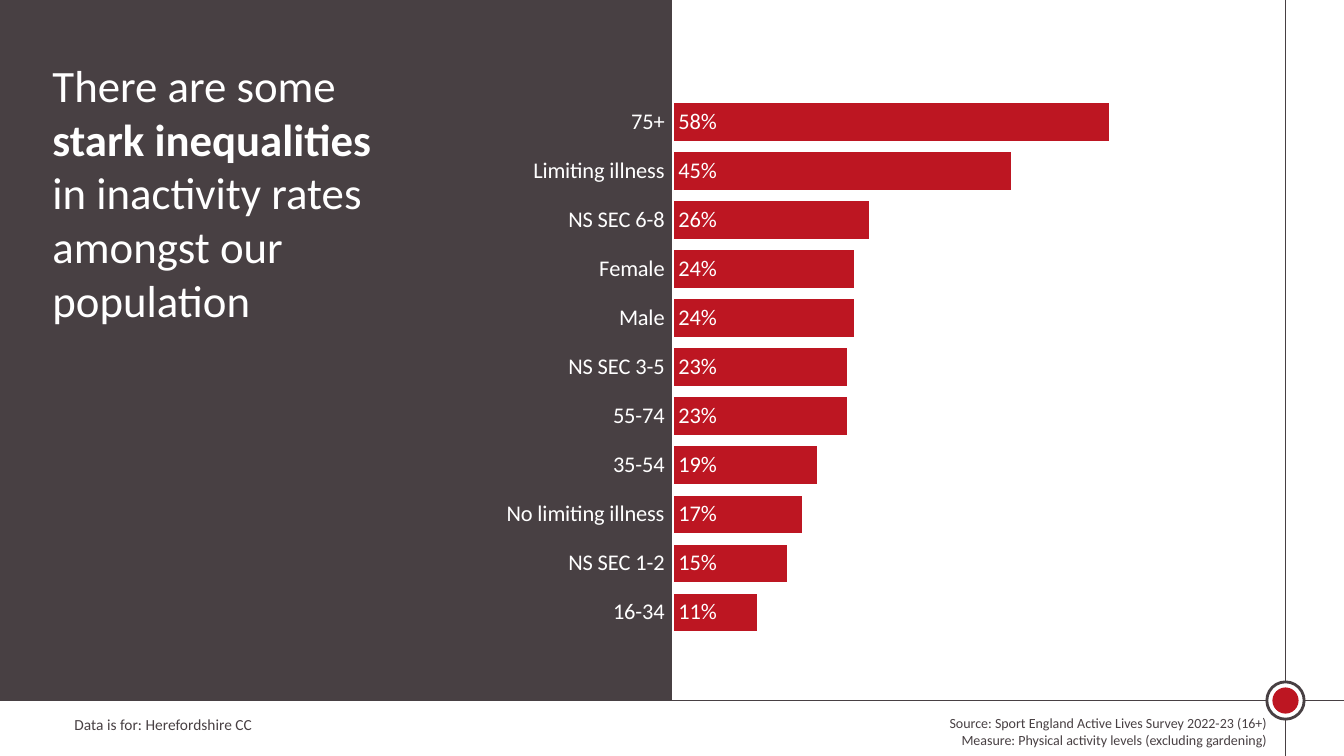
from lxml import etree
from pptx import Presentation
from pptx.chart.data import CategoryChartData
from pptx.dml.color import RGBColor
from pptx.enum.chart import XL_CHART_TYPE as ChartType, XL_LABEL_POSITION as LabelPos
from pptx.enum.chart import XL_TICK_LABEL_POSITION as TickLabels, XL_TICK_MARK as TickMark
from pptx.enum.shapes import MSO_CONNECTOR as Connector, MSO_SHAPE as Preset
from pptx.enum.text import MSO_ANCHOR as Anchor, MSO_AUTO_SIZE as AutoSize, PP_ALIGN as Align
from pptx.oxml import parse_xml
from pptx.oxml.ns import nsdecls, qn
from pptx.util import Inches, Pt

FONT = "Calibri"
DARK, RED, WHITE = "484043", "BD1622", "FFFFFF"
WIDTH, HEIGHT = 13.33, 7.5
RULE_X, RULE_Y = 12.75, 6.95

HEADLINE = [
    [("There are some ", False), ("stark inequalities", True)],
    [("in inactivity rates amongst our population", False)],
]
FOOTERS = [
    (["Data is for: Herefordshire CC"], (0.64, 7.04, 3.63, 0.29), 11, Align.LEFT),
    (["Source: Sport England Active Lives Survey 2022-23 (16+)",
      "Measure: Physical activity levels (excluding gardening)"],
     (6.19, 7.04, 6.47, 0.44), 10, Align.RIGHT),
]
INACTIVITY = {
    "75+": 0.58, "Limiting illness": 0.45, "NS SEC 6-8": 0.26, "Female": 0.24,
    "Male": 0.24, "NS SEC 3-5": 0.23, "55-74": 0.23, "35-54": 0.19,
    "No limiting illness": 0.17, "NS SEC 1-2": 0.15, "16-34": 0.11,
}
CHART_BOX = (3.11, 0.79, 9.52, 5.86)
PLOT_SHARES = {"x": 0.376, "y": 0.03, "w": 0.624, "h": 0.914}
RINGS = [(0.37, WHITE, DARK), (0.26, RED, None)]


def rgb(color):
    return RGBColor.from_string(color)


def inches(box):
    return [Inches(length) for length in box]


def style(font, size, color, bold=False):
    font.name, font.size, font.bold = FONT, Pt(size), bold
    font.color.rgb = rgb(color)


def add_block(slide, preset, box, fill, outline=None):
    block = slide.shapes.add_shape(preset, *inches(box))
    block.shadow.inherit = False
    block.fill.solid()
    block.fill.fore_color.rgb = rgb(fill)
    if outline:
        block.line.color.rgb = rgb(outline)
        block.line.width = Pt(2)
    else:
        block.line.fill.background()


def add_rule(slide, ends):
    rule = slide.shapes.add_connector(Connector.STRAIGHT, *inches(ends))
    rule.line.color.rgb = rgb(DARK)
    rule.line.width = Pt(0.5)
    etree.SubElement(rule._element.spPr, qn("a:effectLst"))


def add_footer(slide, lines, box, size, align):
    frame = slide.shapes.add_textbox(*inches(box)).text_frame
    frame.word_wrap = True
    frame.text = "\n".join(lines)
    for paragraph in frame.paragraphs:
        paragraph.alignment = align
        style(paragraph.runs[0].font, size, DARK)


def add_headline(slide):
    title = slide.shapes.title
    slide.shapes._spTree.append(title._element)
    title.left, title.top, title.width, title.height = inches((0.42, 0.52, 3.85, 3.39))
    frame = title.text_frame
    frame.word_wrap, frame.auto_size = True, AutoSize.NONE
    frame.vertical_anchor = Anchor.TOP
    frame.text = "\n".join("" for _ in HEADLINE)
    for paragraph, parts in zip(frame.paragraphs, HEADLINE):
        paragraph.alignment = Align.LEFT
        for words, bold in parts:
            run = paragraph.add_run()
            run.text = words
            style(run.font, 32, WHITE, bold)


def add_inactivity_chart(slide):
    rates = CategoryChartData(number_format="0%")
    rates.categories = list(INACTIVITY)
    rates.add_series("Inactivity rate", list(INACTIVITY.values()))
    chart = slide.shapes.add_chart(ChartType.BAR_CLUSTERED, *inches(CHART_BOX), rates).chart
    chart.has_legend = chart.has_title = False
    style(chart.font, 16, WHITE)

    groups, scale = chart.category_axis, chart.value_axis
    groups.reverse_order = True
    groups.major_tick_mark = TickMark.OUTSIDE
    groups.tick_label_position = TickLabels.NEXT_TO_AXIS
    groups.format.line.fill.background()
    style(groups.tick_labels.font, 16, WHITE)
    scale.minimum_scale, scale.maximum_scale = 0, 0.8
    scale.has_major_gridlines = scale.visible = False

    plot = chart.plots[0]
    plot.gap_width, plot.vary_by_categories = 30, False
    bars = plot.series[0]
    bars.format.fill.solid()
    bars.format.fill.fore_color.rgb = rgb(RED)
    labels = bars.data_labels
    labels.show_value = True
    labels.position = LabelPos.INSIDE_BASE
    labels.number_format, labels.number_format_is_linked = "0%", False
    style(labels.font, 16, WHITE)

    shares = "".join(f'<c:{side} val="{share}"/>' for side, share in PLOT_SHARES.items())
    layout = parse_xml(
        f'<c:layout {nsdecls("c")}><c:manualLayout><c:layoutTarget val="inner"/>'
        f'<c:xMode val="edge"/><c:yMode val="edge"/>{shares}</c:manualLayout></c:layout>')
    area = chart._chartSpace.chart.plotArea
    for automatic in area.findall(qn("c:layout")):
        area.remove(automatic)
    area.insert(0, layout)


def main():
    deck = Presentation()
    deck.slide_width, deck.slide_height = inches((WIDTH, HEIGHT))
    slide = deck.slides.add_slide(deck.slide_layouts[5])
    add_block(slide, Preset.RECTANGLE, (0, 0, WIDTH / 2, RULE_Y), DARK)
    add_rule(slide, (RULE_X, 0, RULE_X, HEIGHT))
    add_rule(slide, (0, RULE_Y, WIDTH, RULE_Y))
    for size, fill, outline in RINGS:
        box = (RULE_X - size / 2, RULE_Y - size / 2, size, size)
        add_block(slide, Preset.OVAL, box, fill, outline)
    for footer in FOOTERS:
        add_footer(slide, *footer)
    add_headline(slide)
    add_inactivity_chart(slide)
    deck.save("out.pptx")


if __name__ == "__main__":
    main()
